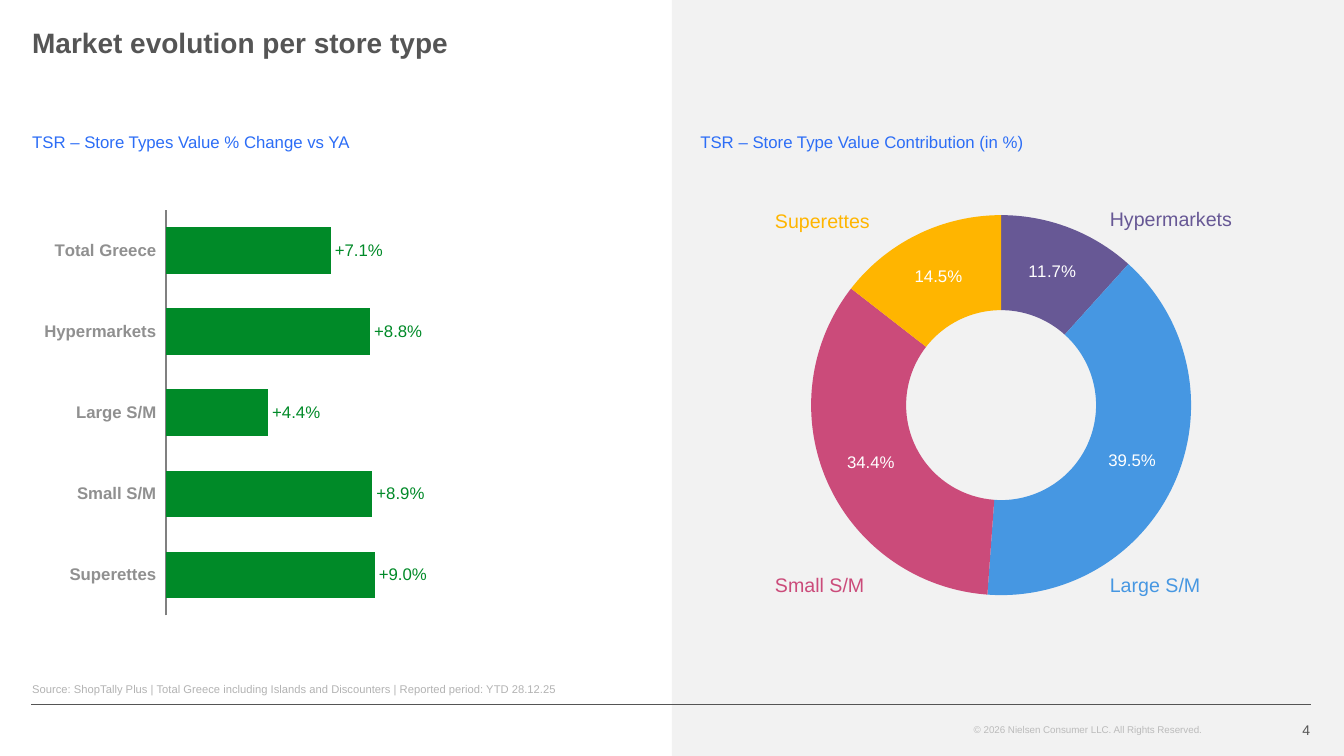
"""Build the slide on market evolution per store type."""
from dataclasses import dataclass

from lxml import etree
from pptx import Presentation
from pptx.chart.data import CategoryChartData
from pptx.dml.color import RGBColor
from pptx.enum import chart as ch, shapes, text
from pptx.oxml import ns
from pptx.util import Cm, Pt


@dataclass(frozen=True)
class Theme:
    """Colours, type sizes and font of the slide."""
    font: str = "Arial"
    ink: str = "555555"
    panel: str = "F2F2F2"
    white: str = "FFFFFF"
    heading: str = "2C6DF6"
    source: str = "B3B3B3"
    legal: str = "BBBBBB"
    category: str = "909090"
    axis: str = "808080"
    decline: str = "AA213F"
    growth: str = "008A28"
    hypermarkets: str = "675895"
    large: str = "4697E2"
    small: str = "CB4B7A"
    superettes: str = "FFB500"
    title_size: int = 20
    store_size: int = 14
    chart_size: int = 12
    base_size: int = 10
    source_size: int = 8
    legal_size: int = 7


THEME = Theme()


def rgb(color):
    """Turn a hex string into a colour."""
    return RGBColor.from_string(color)


def style_font(font, size, color, bold=False):
    """Apply the theme font with a size, colour and weight."""
    font.name = THEME.font
    font.size = Pt(size)
    font.bold = bold
    font.color.rgb = rgb(color)


def place(item, box):
    """Move an item to left, top, width, height in centimetres."""
    item.left, item.top, item.width, item.height = (Cm(length) for length in box)


def write(holder, words, size, color, bold=False, anchor=text.MSO_ANCHOR.TOP,
          align=text.PP_ALIGN.LEFT, wrap=True):
    """Write one formatted paragraph into a text holder."""
    frame = holder.text_frame
    frame.text = words
    frame.word_wrap = wrap
    frame.auto_size = text.MSO_AUTO_SIZE.NONE
    frame.vertical_anchor = anchor
    frame.margin_left = frame.margin_right = 0
    frame.margin_top = frame.margin_bottom = Cm(0.13)
    paragraph = frame.paragraphs[0]
    paragraph.alignment = align
    paragraph.space_before = Pt(0)
    style_font(paragraph.runs[0].font, size, color, bold)
    return paragraph


def add_label(slide, box, words, size, color, **layout):
    """Add a text box with one paragraph."""
    label = slide.shapes.add_textbox(*(Cm(length) for length in box))
    return write(label, words, size, color, **layout)


def add_panel(slide, box):
    """Add the grey panel behind everything else."""
    panel = slide.shapes.add_shape(shapes.MSO_SHAPE.RECTANGLE,
                                   *(Cm(length) for length in box))
    panel.shadow.inherit = False
    panel.fill.solid()
    panel.fill.fore_color.rgb = rgb(THEME.panel)
    panel.line.fill.background()
    slide.shapes._spTree.insert(2, panel._element)


def add_rule(slide, left, right, top):
    """Add the horizontal footer line."""
    rule = slide.shapes.add_connector(shapes.MSO_CONNECTOR.STRAIGHT,
                                      Cm(left), Cm(top), Cm(right), Cm(top))
    rule.line.color.rgb = rgb(THEME.ink)
    rule.line.width = Pt(1)
    etree.SubElement(rule._element.spPr, ns.qn("a:effectLst"))


def set_plot_area(chart, *fractions):
    """Fix the inner plot area as x, y, w, h fractions of the chart."""
    plot_area = chart._chartSpace.chart.plotArea
    for old in plot_area.findall(ns.qn("c:layout")):
        plot_area.remove(old)
    layout = etree.Element(ns.qn("c:layout"))
    manual = etree.SubElement(layout, ns.qn("c:manualLayout"))
    settings = [("layoutTarget", "inner"), ("xMode", "edge"), ("yMode", "edge")]
    settings += zip("xywh", map(str, fractions))
    for tag, value in settings:
        etree.SubElement(manual, ns.qn(f"c:{tag}")).set("val", value)
    plot_area.insert(0, layout)


def add_chart(slide, kind, box, categories, *rows):
    """Add a chart without title and legend."""
    data = CategoryChartData()
    data.categories = categories
    for number, values in enumerate(rows, 1):
        data.add_series(f"Series {number}", values)
    chart = slide.shapes.add_chart(kind, *(Cm(length) for length in box), data).chart
    chart.has_title = False
    chart.has_legend = False
    style_font(chart.font, THEME.base_size, THEME.ink)
    return chart


def label_values(series, number_format, color):
    """Show the values of a series."""
    labels = series.data_labels
    labels.show_value = True
    labels.number_format = number_format
    labels.number_format_is_linked = False
    style_font(labels.font, THEME.chart_size, color)
    return labels


def add_change_chart(slide):
    """Add the bars of value change, with a series for declines and one for growth."""
    stores = ["Total Greece", "Hypermarkets", "Large S/M", "Small S/M", "Superettes"]
    chart = add_chart(slide, ch.XL_CHART_TYPE.BAR_CLUSTERED, (0.81, 5.08, 15.37, 10.64),
                      stores, [0] * len(stores), [7.1, 8.8, 4.4, 8.9, 9.0])
    set_plot_area(chart, 0.22, 0.02, 0.76, 0.96)
    bars = chart.plots[0]
    bars.gap_width, bars.overlap = 75, 100
    bars.vary_by_categories = False
    for series, color in zip(bars.series, (THEME.decline, THEME.growth)):
        series.invert_if_negative = False
        series.format.fill.solid()
        series.format.fill.fore_color.rgb = rgb(color)
        labels = label_values(series, r"\+0.0\%;\-0.0\%;;", color)
        labels.position = ch.XL_LABEL_POSITION.OUTSIDE_END

    for axis in (chart.category_axis, chart.value_axis):
        axis.has_major_gridlines = False
        axis.major_tick_mark = axis.minor_tick_mark = ch.XL_TICK_MARK.NONE
    store_axis, change_axis = chart.category_axis, chart.value_axis
    store_axis.reverse_order = True
    store_axis.tick_label_position = ch.XL_TICK_LABEL_POSITION.LOW
    style_font(store_axis.tick_labels.font, THEME.chart_size, THEME.category, bold=True)
    store_axis.format.line.color.rgb = rgb(THEME.axis)
    store_axis.format.line.width = Pt(1.5)
    change_axis.minimum_scale, change_axis.maximum_scale = 0, 20
    change_axis.tick_label_position = ch.XL_TICK_LABEL_POSITION.NONE
    change_axis.format.line.fill.background()


def add_share_chart(slide):
    """Add the ring of value contribution with its store names."""
    left, right, top, bottom = 19.53, 27.97, 5.08, 14.3
    stores = [("Hypermarkets", 11.7, THEME.hypermarkets, right, top),
              ("Large S/M", 39.5, THEME.large, right, bottom),
              ("Small S/M", 34.4, THEME.small, left, bottom),
              ("Superettes", 14.5, THEME.superettes, left, top + 0.05)]
    chart = add_chart(slide, ch.XL_CHART_TYPE.DOUGHNUT, (18.14, 5.08, 14.38, 10.06),
                      ["1", "2", "3", "4"], [share for _, share, *_ in stores])
    set_plot_area(chart, 0.16, 0.034, 0.666, 0.952)
    ring = chart.plots[0]
    ring._element.find(ns.qn("c:holeSize")).set("val", "70")
    series = ring.series[0]
    label_values(series, r"0.0\%", THEME.white)
    for index, (store, _, color, x, y) in enumerate(stores):
        fill = series.points[index].format.fill
        fill.solid()
        fill.fore_color.rgb = rgb(color)
        name = add_label(slide, (x, y, 2.54, 1.09), store, THEME.store_size, color, wrap=False)
        name.space_after = Pt(6)


def main():
    """Build and save the slide."""
    deck = Presentation()
    deck.slide_width, deck.slide_height = Cm(33.87), Cm(19.05)
    slide = deck.slides.add_slide(deck.slide_layouts[1])
    title, source = slide.placeholders
    add_panel(slide, (16.93, 0, 16.94, 19.05))
    add_rule(slide, 0.79, 33.05, 17.75)

    place(title, (0.81, 0.51, 15.39, 1.09))
    write(title, "Market evolution per store type", THEME.title_size, THEME.ink,
          bold=True, anchor=text.MSO_ANCHOR.MIDDLE)
    place(source, (0.81, 16.64, 32.18, 1.02))
    note = write(source, "Source: ShopTally Plus | Total Greece including Islands and "
                 "Discounters | Reported period: YTD 28.12.25",
                 THEME.source_size, THEME.source, anchor=text.MSO_ANCHOR.BOTTOM)
    properties = note._p.get_or_add_pPr()
    properties.set("marL", "0")
    properties.set("indent", "0")
    etree.SubElement(properties, ns.qn("a:buNone"))

    add_change_chart(slide)
    add_share_chart(slide)
    for left, heading in ((0.81, "TSR – Store Types Value % Change vs YA"),
                          (17.65, "TSR – Store Type Value Contribution (in %)")):
        add_label(slide, (left, 3.18, 15.4, 1.22), heading, THEME.chart_size, THEME.heading)
    add_label(slide, (24.54, 18.11, 7.21, 0.56),
              "© 2026 Nielsen Consumer LLC. All Rights Reserved.",
              THEME.legal_size, THEME.legal)
    add_label(slide, (30.51, 17.88, 2.51, 1.02), "4", THEME.base_size, THEME.ink,
              anchor=text.MSO_ANCHOR.MIDDLE, align=text.PP_ALIGN.RIGHT)
    deck.save("out.pptx")


if __name__ == "__main__":
    main()
